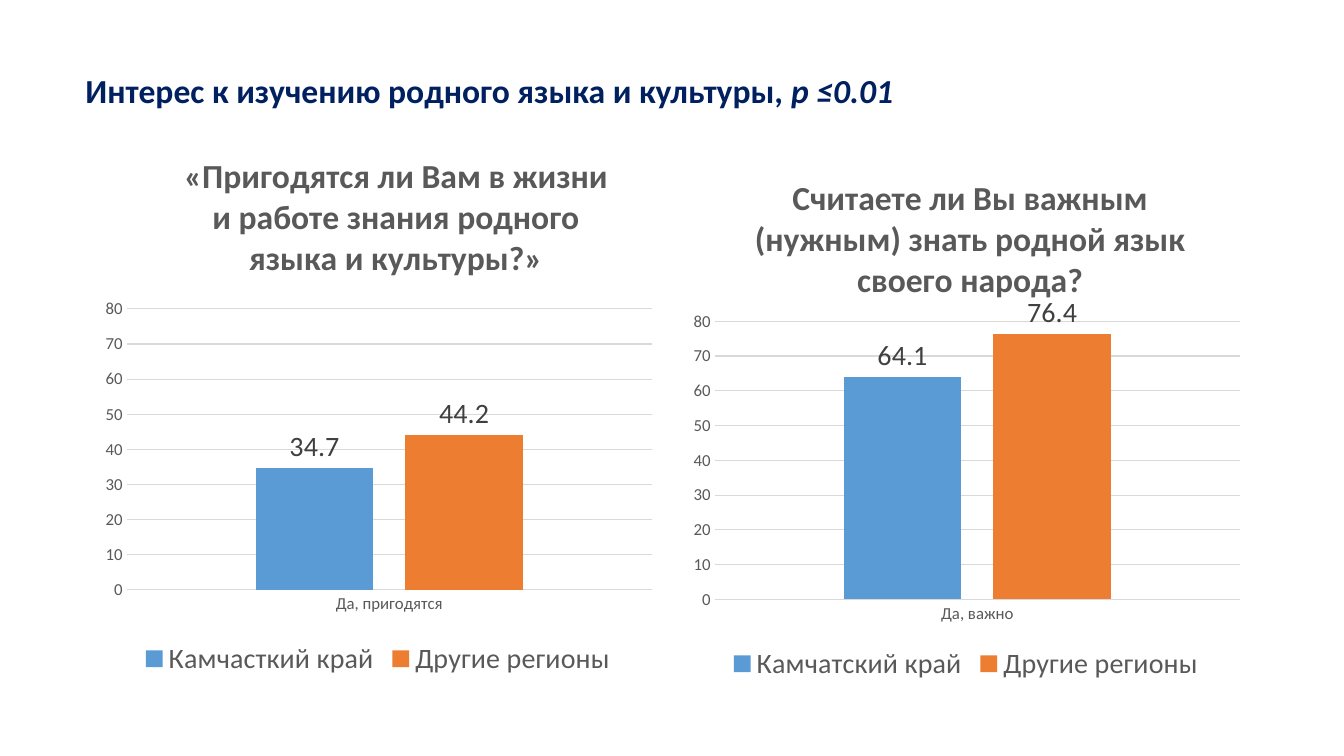
import dataclasses
import typing

import lxml.etree
import pptx
import pptx.chart.data
import pptx.dml.color
import pptx.enum.chart
import pptx.enum.text
import pptx.oxml.ns
import pptx.util

Pt = pptx.util.Pt
qn = pptx.oxml.ns.qn
Tick = pptx.enum.chart.XL_TICK_MARK

COLORS = {"navy": "002060", "gray": "595959", "dark": "404040",
          "grid": "D9D9D9", "blue": "5B9BD5", "orange": "ED7D31"}


@dataclasses.dataclass
class Panel:
    left: float
    height: float
    title: str
    group: str
    values: dict[str, float]
    head: dict[str, float]
    plot: dict[str, float]


PANELS = [
    Panel(66, 386, "«Пригодятся ли Вам в жизни и работе знания родного языка и культуры?»",
          "Да, пригодятся", {"Камчасткий край": 34.7, "Другие регионы": 44.2},
          {"x": 0.15, "y": 0.01}, {"x": 0.06, "y": 0.31, "w": 0.92, "h": 0.52}),
    Panel(486, 389.5, "Считаете ли Вы важным (нужным) знать родной язык своего народа?",
          "Да, важно", {"Камчатский край": 64.1, "Другие регионы": 76.4},
          {"x": 0.12, "y": 0.05}, {"x": 0.06, "y": 0.33, "w": 0.92, "h": 0.51}),
]


def rgb(name: str) -> pptx.dml.color.RGBColor:
    return pptx.dml.color.RGBColor.from_string(COLORS[name])


def apply(item: typing.Any, values: dict[str, typing.Any]) -> None:
    for key, value in values.items():
        setattr(item, key, value)


def style(font: typing.Any, size: float, color: str, **extra: bool) -> None:
    apply(font, {"name": "Calibri", "size": Pt(size), **extra})
    font.color.rgb = rgb(color)


def rule(line: typing.Any) -> None:
    line.color.rgb = rgb("grid")
    line.width = Pt(0.75)


def place(parent: typing.Any, index: int, spots: dict[str, float], inner: bool = False) -> None:
    """Fix a chart part at fractions of the chart area."""
    for old in parent.findall(qn("c:layout")):
        parent.remove(old)
    layout = parent.makeelement(qn("c:layout"))
    parent.insert(index, layout)
    manual = lxml.etree.SubElement(layout, qn("c:manualLayout"))
    marks = {"layoutTarget": "inner"} if inner else {}
    marks |= {"xMode": "edge", "yMode": "edge"}
    for tag, value in (marks | spots).items():
        lxml.etree.SubElement(manual, qn("c:" + tag)).set("val", str(value))


def draw(slide: typing.Any, panel: Panel) -> None:
    data = pptx.chart.data.CategoryChartData()
    data.categories = [panel.group]
    for name, value in panel.values.items():
        data.add_series(name, [value])
    chart = slide.shapes.add_chart(
        pptx.enum.chart.XL_CHART_TYPE.COLUMN_CLUSTERED, Pt(panel.left), Pt(101),
        Pt(408), Pt(panel.height), data).chart
    style(chart.font, 10, "gray")

    # Heading
    chart.has_title = True
    frame = chart.chart_title.text_frame
    frame.text = panel.title
    style(frame.paragraphs[0].runs[0].font, 24, "gray", bold=True)
    place(chart.chart_title.element, 1, panel.head)
    place(chart.element.find(".//" + qn("c:plotArea")), 0, panel.plot, inner=True)

    # Axes
    for axis in (chart.category_axis, chart.value_axis):
        apply(axis, {"major_tick_mark": Tick.NONE, "minor_tick_mark": Tick.NONE})
        style(axis.tick_labels.font, 12, "gray")
    rule(chart.category_axis.format.line)
    scale = chart.value_axis
    apply(scale, {"minimum_scale": 0, "maximum_scale": 80, "major_unit": 10,
                  "has_major_gridlines": True})
    scale.format.line.fill.background()
    rule(scale.major_gridlines.format.line)

    # Legend
    chart.has_legend = True
    apply(chart.legend, {"position": pptx.enum.chart.XL_LEGEND_POSITION.BOTTOM,
                         "include_in_layout": False})
    style(chart.legend.font, 20, "gray")

    # Columns
    plot = chart.plots[0]
    apply(plot, {"gap_width": 219, "overlap": -27, "vary_by_categories": False})
    for series, color in zip(plot.series, ("blue", "orange")):
        series.format.fill.solid()
        series.format.fill.fore_color.rgb = rgb(color)
        apply(series.data_labels, {
            "show_value": True,
            "position": pptx.enum.chart.XL_LABEL_POSITION.OUTSIDE_END})
        style(series.data_labels.font, 20, "dark")


def main() -> None:
    deck = pptx.Presentation()
    apply(deck, {"slide_width": Pt(960), "slide_height": Pt(540)})
    slide = deck.slides.add_slide(deck.slide_layouts[6])

    # Slide title
    frame = slide.shapes.add_textbox(Pt(54), Pt(13.7), Pt(828), Pt(104.4)).text_frame
    apply(frame, {"word_wrap": True,
                  "vertical_anchor": pptx.enum.text.MSO_ANCHOR.MIDDLE})
    line = frame.paragraphs[0]
    line.line_spacing = 0.9
    for text, slant in (("Интерес к изучению родного языка и культуры, ", False),
                        ("p ≤0.01", True)):
        run = line.add_run()
        run.text = text
        style(run.font, 24, "navy", bold=True, italic=slant)

    # Charts
    for panel in PANELS:
        draw(slide, panel)
    deck.save("out.pptx")


if __name__ == "__main__":
    main()
